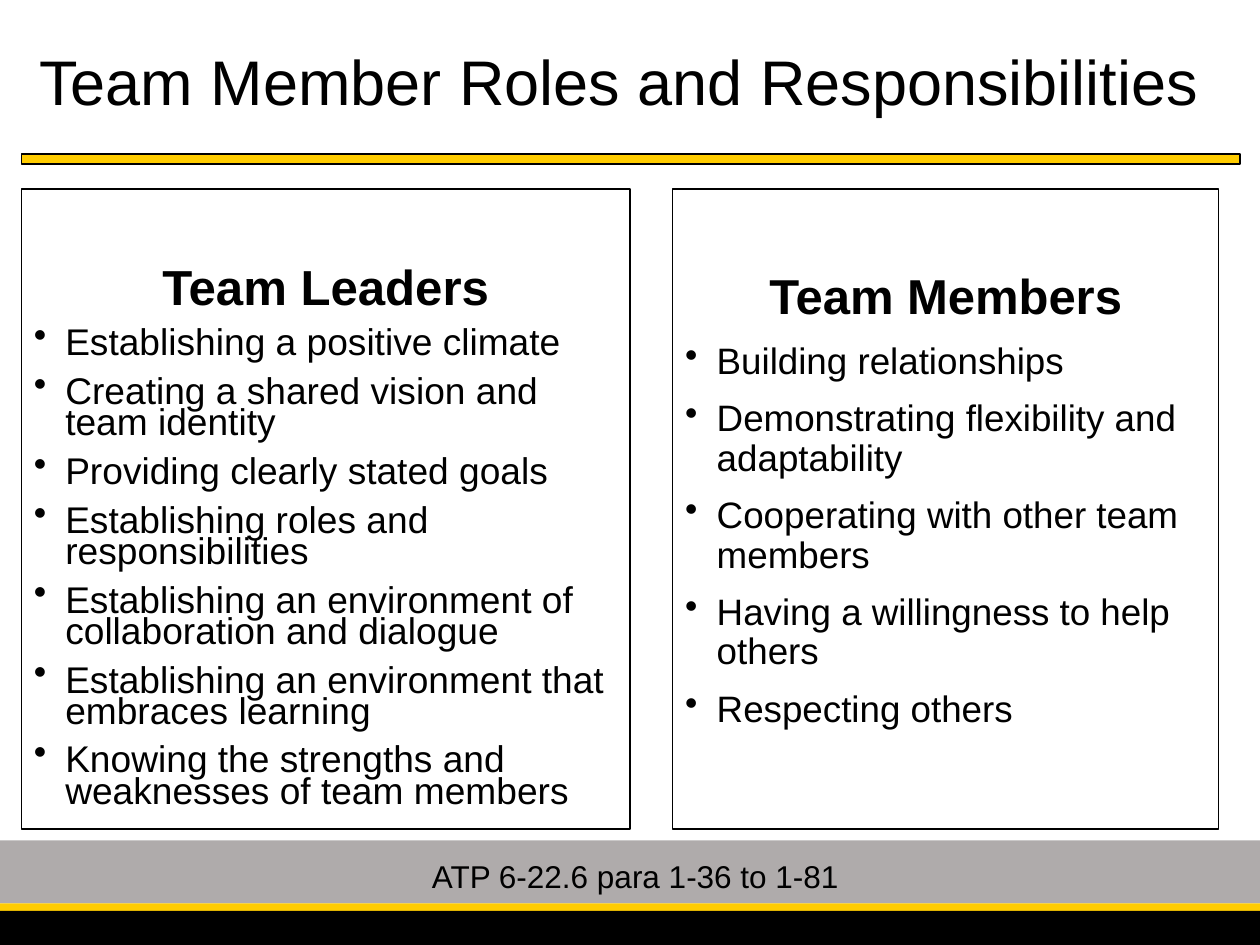
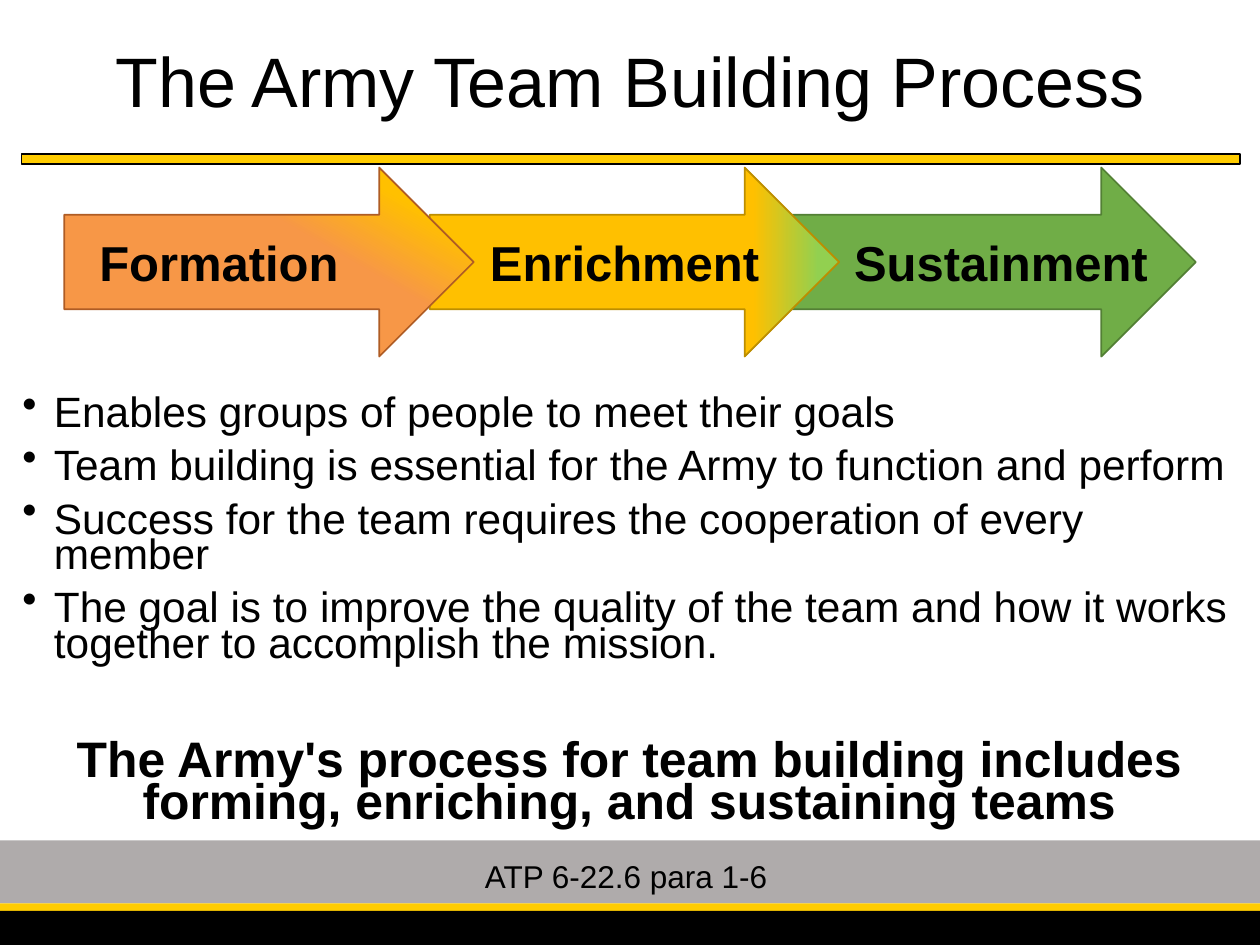
import pptx
import pptx.util
import pptx.dml.color
import pptx.enum.shapes
import pptx.enum.text
import pptx.oxml.ns
import lxml.etree

Inches = pptx.util.Inches
Pt = pptx.util.Pt
Shape = pptx.enum.shapes.MSO_SHAPE
Align = pptx.enum.text.PP_ALIGN
Anchor = pptx.enum.text.MSO_ANCHOR

BLACK = "000000"
GOLD = "FFCC00"
GRAY = "AFABAB"
AMBER = "FFC000"


def color(text):
    return pptx.dml.color.RGBColor.from_string(text)


class Deck:
    font = "Arial"

    def __init__(self):
        self.show = pptx.Presentation()
        self.show.slide_width = Inches(10)
        self.show.slide_height = Inches(7.5)
        self.slide = None

    def start(self, title, size, span, source, place):
        self.slide = self.show.slides.add_slide(self.show.slide_layouts[6])
        self.shape((0, 6.67, 10, 0.5), fill=GRAY)
        self.shape((0, 7.17, 10, 0.06), fill=GOLD)
        self.shape((0, 7.23, 10, 0.27), fill=BLACK)
        self.shape((0.17, 1.22, 9.67, 0.08), fill=GOLD, line=BLACK)
        left, width = span
        frame = self.frame((left, 0.13, width, 1.09))
        frame.vertical_anchor = Anchor.MIDDLE
        self.line(frame, title, size, align=Align.CENTER, lead=0.9)
        left, width = place
        self.label(source, 18, (left, 6.75, width, 0.4))

    def shape(self, box, kind=Shape.RECTANGLE, fill=None, line=None, weight=1):
        item = self.slide.shapes.add_shape(kind, *map(Inches, box))
        item.shadow.inherit = False
        if isinstance(fill, list):
            self.blend(item.fill, *fill)
        elif fill:
            item.fill.solid()
            item.fill.fore_color.rgb = color(fill)
        else:
            item.fill.background()
        if line:
            item.line.color.rgb = color(line)
            item.line.width = Pt(weight)
        else:
            item.line.fill.background()
        return item

    def blend(self, fill, angle, *stops):
        fill.gradient()
        fill.gradient_angle = angle
        for stop, (place, tint) in zip(fill.gradient_stops, stops):
            stop.position = place
            stop.color.rgb = color(tint)

    def frame(self, box):
        frame = self.slide.shapes.add_textbox(*map(Inches, box)).text_frame
        frame.word_wrap = True
        return frame

    def label(self, text, size, box, bold=False):
        self.line(self.frame(box), text, size, bold)

    def line(self, frame, text, size, bold=False, align=Align.LEFT,
             lead=1.0, before=0, bullet=False):
        first = not frame.text
        para = frame.paragraphs[0] if first else frame.add_paragraph()
        para.text = text
        if bullet:
            props = para._p.get_or_add_pPr()
            props.set("marL", str(Inches(0.25)))
            props.set("indent", str(-Inches(0.25)))
            name = pptx.oxml.ns.qn("a:buChar")
            lxml.etree.SubElement(props, name).set("char", "•")
        para.alignment = align
        para.line_spacing = lead
        para.space_before = Pt(0 if first else before)
        font = para.runs[0].font
        font.name = self.font
        font.size = Pt(size)
        font.bold = bold
        font.color.rgb = color(BLACK)

    def points(self, frame, items, size, lead):
        for item in items:
            self.line(frame, item, size, lead=lead, before=10, bullet=True)

    def panel(self, box, head, items, sizes, lead):
        frame = self.shape(box, line=BLACK, weight=0.75).text_frame
        frame.word_wrap = True
        frame.vertical_anchor = Anchor.TOP
        frame.margin_top = Inches(0.66)
        self.line(frame, head, sizes[0], True, Align.CENTER, lead)
        self.points(frame, items, sizes[1], lead)


def roles(deck):
    deck.start("Team Member Roles and Responsibilities", 36, (0.17, 9.48),
               "ATP 6-22.6 para 1-36 to 1-81", (3.33, 3.83))
    deck.panel((0.17, 1.5, 4.83, 5.08), "Team Leaders", [
        "Establishing a positive climate",
        "Creating a shared vision and team identity",
        "Providing clearly stated goals",
        "Establishing roles and responsibilities",
        "Establishing an environment of collaboration and dialogue",
        "Establishing an environment that embraces learning",
        "Knowing the strengths and weaknesses of team members",
    ], (28.1, 21.2), 0.7)
    deck.panel((5.34, 1.5, 4.33, 5.08), "Team Members", [
        "Building relationships",
        "Demonstrating flexibility and adaptability",
        "Cooperating with other team members",
        "Having a willingness to help others",
        "Respecting others",
    ], (28, 21), 0.9)


def process(deck):
    deck.start("The Army Team Building Process", 40, (0.69, 8.62),
               "ATP 6-22.6 para 1-6", (3.75, 2.58))
    stages = [
        ("Sustainment", 6.24, "70AD47", "538035", 6.68, 2.58),
        ("Enrichment", 3.41, [180, (0.05, "92D050"), (0.21, AMBER)],
         "BD8E00", 3.79, 2.48),
        ("Formation", 0.51, [240, (0.17, AMBER), (0.39, "F79747")],
         "AF5C24", 0.69, 2.15),
    ]
    for name, left, fill, edge, start, width in stages:
        deck.shape((left, 1.33, 3.25, 1.5), Shape.RIGHT_ARROW, fill, edge)
    for name, left, fill, edge, start, width in stages:
        deck.label(name, 28, (start, 1.8, width, 0.57), True)
    body = deck.frame((0.08, 3.12, 9.83, 3.83))
    deck.points(body, [
        "Enables groups of people to meet their goals",
        "Team building is essential for the Army to function and perform",
        "Success for the team requires the cooperation of every member",
        "The goal is to improve the quality of the team and how it works "
        "together to accomplish the mission.",
    ], 24.2, 0.7)
    deck.line(body, "The Army's process for team building includes forming, "
              "enriching, and sustaining teams", 28.5, True, Align.CENTER,
              0.7, 45)


def main():
    deck = Deck()
    roles(deck)
    process(deck)
    deck.show.save("out.pptx")


if __name__ == "__main__":
    main()
